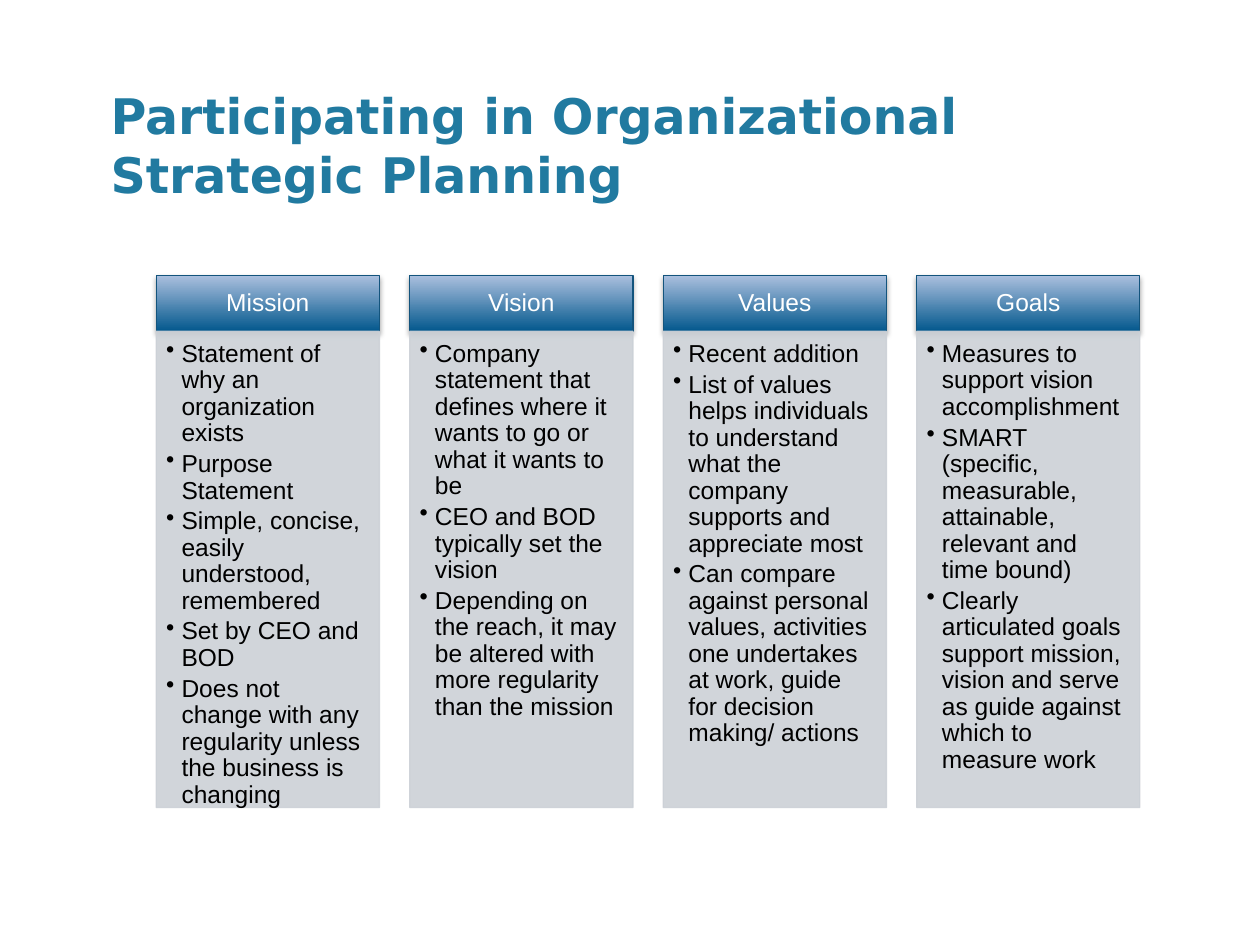
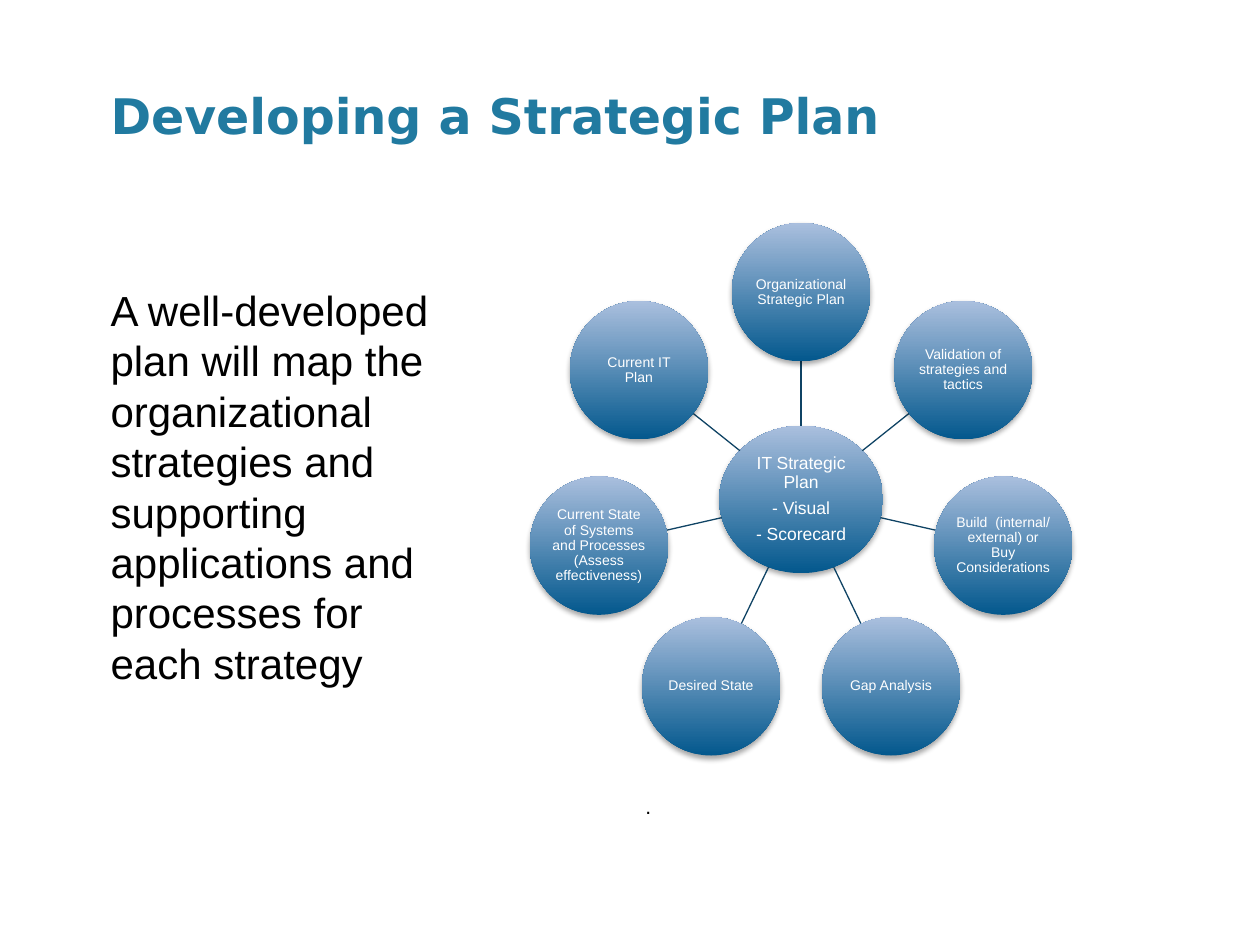
import math

import pptx
import pptx.dml.color
import pptx.enum.shapes
import pptx.enum.text
import pptx.oxml.ns
import pptx.util
from lxml import etree

Cm, Pt = pptx.util.Cm, pptx.util.Pt
RGB = pptx.dml.color.RGBColor.from_string
SHAPE = pptx.enum.shapes.MSO_SHAPE
ALIGN = pptx.enum.text.PP_ALIGN
ANCHOR = pptx.enum.text.MSO_ANCHOR
qn = pptx.oxml.ns.qn

PLANNING_TITLE = "Participating in Organizational Strategic Planning"
COLUMNS = {
    "Mission": [
        "Statement of why an organization exists",
        "Purpose Statement",
        "Simple, concise, easily understood, remembered",
        "Set by CEO and BOD",
        "Does not change with any regularity unless the business is changing",
    ],
    "Vision": [
        "Company statement that defines where it wants to go or what it wants to be",
        "CEO and BOD typically set the vision",
        "Depending on the reach, it may be altered with more regularity than the mission",
    ],
    "Values": [
        "Recent addition",
        "List of values helps individuals to understand what the company supports and appreciate most",
        "Can compare against personal values, activities one undertakes at work, "
        "guide for decision making/ actions",
    ],
    "Goals": [
        "Measures to support vision accomplishment",
        "SMART (specific, measurable, attainable, relevant and time bound)",
        "Clearly articulated goals support mission, vision and serve as guide "
        "against which to measure work",
    ],
}

DEVELOPING_TITLE = "Developing a Strategic Plan"
STATEMENT = (
    "A well-developed plan will map the organizational strategies and supporting "
    "applications and processes for each strategy"
)
HUB = ["IT Strategic Plan", "- Visual", "- Scorecard"]
NODES = [
    "Organizational Strategic Plan",
    "Validation of strategies and tactics",
    "Build  (internal/ external) or Buy Considerations",
    "Gap Analysis",
    "Desired State",
    "Current State of Systems and Processes (Assess effectiveness)",
    "Current IT Plan",
]
FOOTER = "."

THEME = {
    "grad": ("03588D", "AABFDE"),
    "panel": "CCD1D7",
    "header_line": "13547D",
    "spoke": "0F4364",
    "title": {"name": "DejaVu Sans", "size": Pt(28), "bold": True, "color": "217AA0"},
    "statement": {"name": "Arial", "size": Pt(24), "color": "000000"},
    "footer": {"name": "Arial", "size": Pt(12), "color": "000000"},
    "header": {"name": "Arial", "size": Pt(14), "color": "FFFFFF"},
    "bullet": {"name": "Arial", "size": Pt(14), "color": "000000"},
    "hub": {"name": "Arial", "size": Pt(10), "color": "FFFFFF"},
    "node": {"name": "Arial", "size": Pt(8), "color": "FFFFFF"},
}
LEFT = {"alignment": ALIGN.LEFT}
CENTER = {"alignment": ALIGN.CENTER}
DIAGRAM = {"alignment": ALIGN.CENTER, "line_spacing": 0.9}
BULLET = {"alignment": ALIGN.LEFT, "line_spacing": 0.9}
BULLET_INDENT = Cm(0.31)


def apply(obj, values):
    for key, value in values.items():
        setattr(obj, key, value)


def write(tf, lines, style, para, gap=0, bullet=False):
    tf.word_wrap = True
    for i, line in enumerate(lines):
        p = tf.paragraphs[0] if i == 0 else tf.add_paragraph()
        if bullet:
            pPr = p._p.get_or_add_pPr()
            pPr.set("marL", str(BULLET_INDENT))
            pPr.set("indent", str(-BULLET_INDENT))
            etree.SubElement(pPr, qn("a:buChar"), char="•")
        apply(p, para)
        if gap:
            p.space_after = Pt(round(style["size"].pt * gap, 1))
        r = p.add_run()
        r.text = line
        apply(r.font, {k: v for k, v in style.items() if k != "color"})
        r.font.color.rgb = RGB(style["color"])


def set_insets(tf, left, top, right, bottom):
    apply(tf, {
        "margin_left": Cm(left), "margin_top": Cm(top),
        "margin_right": Cm(right), "margin_bottom": Cm(bottom),
    })


def add_text(s, box, text, style, para):
    sp = s.shapes.add_textbox(*map(Cm, box))
    write(sp.text_frame, [text], style, para)


def add_slide(prs, title):
    s = prs.slides.add_slide(prs.slide_layouts[6])
    add_text(s, (1.98, 1.6, 22.15, 2.24), title, THEME["title"], LEFT)
    return s


def add_glossy(s, kind, box, line=None):
    sp = s.shapes.add_shape(kind, *map(Cm, box))
    sp.fill.gradient()
    sp.fill.gradient_angle = 90
    for stop, color in zip(sp.fill.gradient_stops, THEME["grad"]):
        stop.color.rgb = RGB(color)
    if line:
        sp.line.color.rgb = RGB(line)
        sp.line.width = Pt(0.75)
    else:
        sp.line.fill.background()
    sp.shadow.inherit = False
    effects = sp._element.spPr.find(qn("a:effectLst"))
    shadow = etree.SubElement(
        effects, qn("a:outerShdw"), blurRad=str(Pt(3.1)), dist=str(Pt(1.8)),
        dir="5400000", rotWithShape="0")
    black = etree.SubElement(shadow, qn("a:srgbClr"), val="000000")
    etree.SubElement(black, qn("a:alpha"), val="35000")
    sp.text_frame.vertical_anchor = ANCHOR.MIDDLE
    return sp


def add_panel(s, box, bullets):
    sp = s.shapes.add_shape(SHAPE.RECTANGLE, *map(Cm, box))
    sp.shadow.inherit = False
    sp.fill.solid()
    sp.fill.fore_color.rgb = RGB(THEME["panel"])
    sp.line.color.rgb = RGB(THEME["panel"])
    sp.line.width = Pt(0.75)
    for color in sp._element.spPr.iter(qn("a:srgbClr")):
        etree.SubElement(color, qn("a:alpha"), val="90000")
    tf = sp.text_frame
    tf.vertical_anchor = ANCHOR.TOP
    set_insets(tf, 0.2, 0.2, 0.28, 0.3)
    write(tf, bullets, THEME["bullet"], BULLET, 0.17, bullet=True)


def add_circle(s, cx, cy, width, height, lines, style):
    sp = add_glossy(s, SHAPE.OVAL, (cx - width / 2, cy - height / 2, width, height))
    set_insets(sp.text_frame, 0.03, 0.03, 0.03, 0.03)
    write(sp.text_frame, lines, style, DIAGRAM, 0.4)


def add_spoke(s, start, end):
    line = s.shapes.add_connector(
        pptx.enum.shapes.MSO_CONNECTOR.STRAIGHT, *map(Cm, start + end))
    line.line.color.rgb = RGB(THEME["spoke"])
    line.line.width = Pt(0.75)
    etree.SubElement(line._element.spPr, qn("a:effectLst"))


def build_planning(prs):
    s = add_slide(prs, PLANNING_TITLE)
    left, top, width, pitch = 3.15, 5.56, 4.5, 5.11
    header_height, panel_height = 1.12, 9.6
    for i, (name, bullets) in enumerate(COLUMNS.items()):
        x = left + i * pitch
        header = add_glossy(
            s, SHAPE.RECTANGLE, (x, top, width, header_height), THEME["header_line"])
        set_insets(header.text_frame, 0.28, 0.15, 0.28, 0.15)
        write(header.text_frame, [name], THEME["header"], DIAGRAM, 0.4)
        add_panel(s, (x, top + header_height, width, panel_height), bullets)


def build_developing(prs):
    s = add_slide(prs, DEVELOPING_TITLE)
    cx, cy, hub_width, hub_height = 16.15, 10.07, 3.3, 2.97
    node_size, orbit = 2.79, 4.18
    add_circle(s, cx, cy, hub_width, hub_height, HUB, THEME["hub"])
    for i, name in enumerate(NODES):
        angle = 2 * math.pi * i / len(NODES)
        dx, dy = math.sin(angle), -math.cos(angle)
        hub_edge = 1 / math.hypot(2 * dx / hub_width, 2 * dy / hub_height)
        start, end, center = [
            (cx + dx * dist, cy + dy * dist)
            for dist in (hub_edge, orbit - node_size / 2, orbit)
        ]
        add_spoke(s, start, end)
        add_circle(s, *center, node_size, node_size, [name], THEME["node"])
    add_text(s, (1.22, 15.88, 23.7, 0.76), FOOTER, THEME["footer"], CENTER)
    add_text(s, (1.98, 5.61, 7.47, 8.46), STATEMENT, THEME["statement"], LEFT)


def main():
    prs = pptx.Presentation()
    prs.slide_width, prs.slide_height = Cm(25.4), Cm(19.05)
    build_planning(prs)
    build_developing(prs)
    prs.save("out.pptx")


if __name__ == "__main__":
    main()
